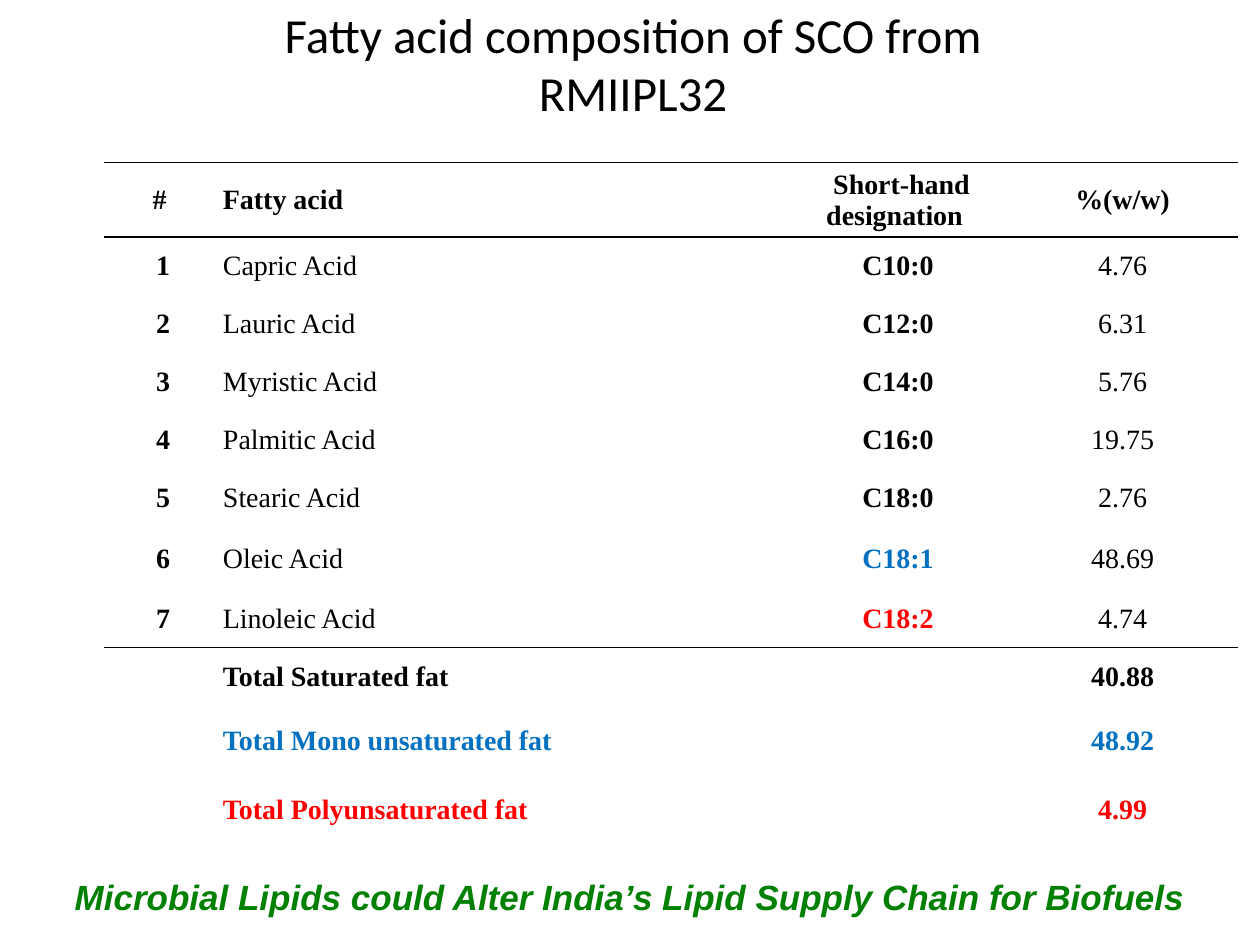
from dataclasses import dataclass

from lxml.etree import SubElement
from pptx import Presentation
from pptx.dml.color import RGBColor
from pptx.enum.text import MSO_ANCHOR, PP_ALIGN
from pptx.oxml.ns import qn
from pptx.util import Inches, Pt


@dataclass(frozen=True)
class Theme:
    black: str = "000000"
    blue: str = "0070C0"
    red: str = "FF0000"
    green: str = "008000"
    title_font: str = "Calibri"
    table_font: str = "Times New Roman"
    note_font: str = "Arial"
    title_size: int = 28
    table_size: int = 16
    note_size: int = 20
    rule_width: int = 1


class SlideBuilder:
    def __init__(self, prs, theme):
        self.theme = theme
        self.s = prs.slides.add_slide(prs.slide_layouts[6])

    def style(self, p, font, size, color, bold=False, italic=False, align=PP_ALIGN.CENTER):
        p.alignment = align
        for r in p.runs:
            r.font.name = font
            r.font.size = Pt(size)
            r.font.bold = bold
            r.font.italic = italic
            r.font.color.rgb = RGBColor.from_string(color)

    def text(self, box, text, font, size, color, anchor=MSO_ANCHOR.TOP, **look):
        tf = self.s.shapes.add_textbox(*map(Inches, box)).text_frame
        tf.word_wrap = True
        tf.vertical_anchor = anchor
        tf.text = text
        self.style(tf.paragraphs[0], font, size, color, **look)

    def table(self, left, top, widths, heights):
        frame = self.s.shapes.add_table(
            len(heights), len(widths), Inches(left), Inches(top),
            Inches(sum(widths)), Inches(sum(heights)))
        table = frame.table
        table.first_row = table.horz_banding = False
        for col, width in zip(table.columns, widths):
            col.width = Inches(width)
        for row, height in zip(table.rows, heights):
            row.height = Inches(height)
        for cell in table.iter_cells():
            cell.fill.background()
        return table

    def cell(self, cell, text, color, bold, align):
        cell.vertical_anchor = MSO_ANCHOR.MIDDLE
        cell.margin_left = cell.margin_right = cell.margin_top = Inches(0.01)
        cell.margin_bottom = 0
        cell.text = text
        self.style(cell.text_frame.paragraphs[0], self.theme.table_font,
                   self.theme.table_size, color, bold, align=align)

    def rule_below(self, table, row):
        """Draw a line between a row and the next one."""
        for index, side in ((row, "a:lnB"), (row + 1, "a:lnT")):
            for cell in table.rows[index].cells:
                tc_pr = cell._tc.get_or_add_tcPr()
                ln = SubElement(tc_pr, qn(side), w=str(Pt(self.theme.rule_width)))
                fill = SubElement(ln, qn("a:solidFill"))
                SubElement(fill, qn("a:srgbClr"), val=self.theme.black)
                # Lines come before the fill, the top line first
                tc_pr.insert(1 if tc_pr[0].tag == qn("a:lnT") else 0, ln)


def main():
    theme = Theme()
    prs = Presentation()
    prs.slide_width, prs.slide_height = Inches(10), Inches(7.5)
    slide = SlideBuilder(prs, theme)

    # Table content: text per column, then the accent colour
    header = ("# ", "Fatty acid", "Short-hand designation  ", "%(w/w)")
    acids = [
        ("Capric Acid", "C10:0 ", "4.76", theme.black),
        ("Lauric Acid", "C12:0 ", "6.31", theme.black),
        ("Myristic Acid", "C14:0 ", "5.76", theme.black),
        ("Palmitic Acid", "C16:0 ", "19.75", theme.black),
        ("Stearic Acid", "C18:0 ", "2.76", theme.black),
        ("Oleic Acid", "C18:1 ", "48.69", theme.blue),
        ("Linoleic Acid", "C18:2 ", "4.74", theme.red),
    ]
    totals = [
        ("Total Saturated fat", "40.88", theme.black),
        ("Total Mono unsaturated fat", "48.92", theme.blue),
        ("Total Polyunsaturated fat", "4.99", theme.red),
    ]

    # Table, with an empty first row above the header
    heights = [0.46, 0.59] + [0.46] * 5 + [0.5, 0.46, 0.46, 0.55, 0.55]
    table = slide.table(0.83, 0.83, [0.93, 4.55, 1.69, 1.82], heights)
    aligns = (PP_ALIGN.CENTER, PP_ALIGN.LEFT, PP_ALIGN.CENTER, PP_ALIGN.CENTER)
    header_row, first_acid = 1, 2
    first_total = first_acid + len(acids)

    def fill_row(row, texts, colors, bolds):
        for col, text in enumerate(texts):
            if text:
                slide.cell(table.cell(row, col), text, colors[col], bolds[col], aligns[col])

    fill_row(header_row, header, [theme.black] * 4, [True] * 4)
    for i, (name, code, share, accent) in enumerate(acids):
        fill_row(first_acid + i, (str(i + 1), name, code, share),
                 (theme.black, theme.black, accent, theme.black),
                 (True, False, True, False))
    for i, (name, share, accent) in enumerate(totals):
        fill_row(first_total + i, ("", name, "", share), [accent] * 4, [True] * 4)

    # Rules around the header and above the totals
    for row in (header_row - 1, header_row, first_total - 1):
        slide.rule_below(table, row)

    # Title and closing line
    slide.text((1.41, 0, 7.23, 1), "Fatty acid composition of SCO from RMIIPL32",
               theme.title_font, theme.title_size, theme.black, MSO_ANCHOR.MIDDLE)
    slide.text((0, 6.9, 10, 0.6),
               "Microbial Lipids could Alter India’s Lipid Supply Chain for Biofuels",
               theme.note_font, theme.note_size, theme.green, bold=True, italic=True)

    prs.save("out.pptx")


if __name__ == "__main__":
    main()
